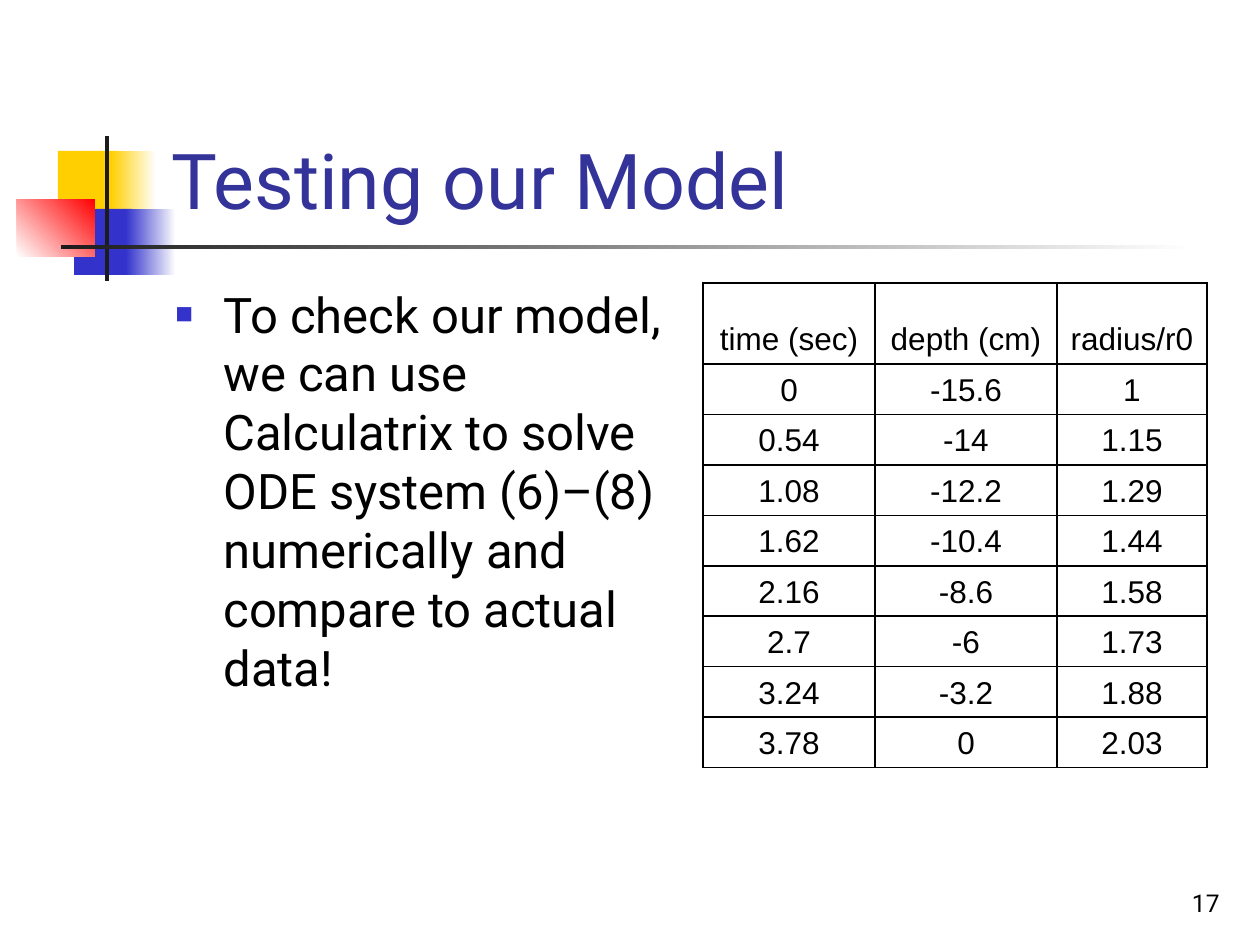
from dataclasses import dataclass
from typing import Optional

import pptx
import pptx.dml.color
import pptx.enum.shapes
import pptx.enum.text
import pptx.oxml
import pptx.oxml.ns
import pptx.util
from lxml import etree

PX = 914400 / 126
ALIGN = pptx.enum.text.PP_ALIGN
ANCHOR = pptx.enum.text.MSO_ANCHOR

BLACK, WHITE, DARK = "000000", "FFFFFF", "1C1C1C"
YELLOW, BLUE, RED, NAVY = "FFCF01", "3333CC", "FF0000", "333399"


@dataclass
class Block:
    """A decorative rectangle; with an end colour it becomes a gradient."""
    x: int
    y: int
    w: int
    h: int
    color: str
    end: Optional[str] = None
    angle: int = 0


BLOCKS = [
    Block(58, 151, 60, 66, YELLOW),
    Block(111, 151, 45, 66, YELLOW, WHITE),
    Block(74, 209, 58, 66, BLUE),
    Block(126, 209, 50, 66, BLUE, WHITE),
    Block(17, 199, 78, 58, WHITE, RED, 45),
    Block(105, 136, 4, 145, DARK),
    Block(61, 245, 1134, 4, DARK, WHITE),
]

COLUMN_WIDTHS = [172, 182, 150]
TABLE_HEIGHT, HEADER_HEIGHT = 484, 81
ROWS = [
    ("time (sec)", "depth (cm)", "radius/r0"),
    ("0", "-15.6", "1"),
    ("0.54", "-14", "1.15"),
    ("1.08", "-12.2", "1.29"),
    ("1.62", "-10.4", "1.44"),
    ("2.16", "-8.6", "1.58"),
    ("2.7", "-6", "1.73"),
    ("3.24", "-3.2", "1.88"),
    ("3.78", "0", "2.03"),
]


def emu(px: float) -> int:
    return round(px * PX)


def rgb(color: str) -> pptx.dml.color.RGBColor:
    return pptx.dml.color.RGBColor.from_string(color)


def add_block(s, b: Block) -> None:
    sp = s.shapes.add_shape(pptx.enum.shapes.MSO_SHAPE.RECTANGLE,
                            emu(b.x), emu(b.y), emu(b.w), emu(b.h))
    sp.shadow.inherit = False
    sp.line.fill.background()
    if b.end is None:
        sp.fill.solid()
        sp.fill.fore_color.rgb = rgb(b.color)
        return
    sp.fill.gradient()
    sp.fill.gradient_angle = b.angle
    for stop, color, position in zip(sp.fill.gradient_stops, (b.color, b.end), (0, 1)):
        stop.color.rgb = rgb(color)
        stop.position = position


def write(tf, text: str, *, size: int, font: str = "Roboto", color: str = BLACK,
          align=ALIGN.LEFT):
    p = tf.paragraphs[0]
    p.alignment = align
    r = p.add_run()
    r.text = text
    r.font.size = pptx.util.Pt(size)
    r.font.name = font
    r.font.color.rgb = rgb(color)
    return p


def add_text(s, x: int, y: int, w: int, h: int, text: str, *, anchor=ANCHOR.TOP,
             **fmt):
    tf = s.shapes.add_textbox(emu(x), emu(y), emu(w), emu(h)).text_frame
    tf.word_wrap = True
    tf.vertical_anchor = anchor
    return write(tf, text, **fmt)


def add_bullet(p, char: str, color: str, percent: int, indent: int) -> None:
    pPr = p._p.get_or_add_pPr()
    pPr.set("marL", str(emu(indent)))
    pPr.set("indent", str(-emu(indent)))
    qn = pptx.oxml.ns.qn
    buClr = etree.SubElement(pPr, qn("a:buClr"))
    etree.SubElement(buClr, qn("a:srgbClr"), val=color)
    etree.SubElement(pPr, qn("a:buSzPct"), val=str(percent * 1000))
    etree.SubElement(pPr, qn("a:buFont"), typeface="Arial")
    etree.SubElement(pPr, qn("a:buChar"), char=char)


def set_borders(cell, color: str, width: int) -> None:
    tcPr = cell._tc.get_or_add_tcPr()
    ns = pptx.oxml.ns.nsdecls("a")
    for i, side in enumerate(("lnL", "lnR", "lnT", "lnB")):
        tcPr.insert(i, pptx.oxml.parse_xml(
            f'<a:{side} {ns} w="{pptx.util.Pt(width)}"><a:solidFill>'
            f'<a:srgbClr val="{color}"/></a:solidFill></a:{side}>'))


def add_data_table(s, x: int, y: int) -> None:
    table = s.shapes.add_table(len(ROWS), len(COLUMN_WIDTHS), emu(x), emu(y),
                               emu(sum(COLUMN_WIDTHS)), emu(TABLE_HEIGHT)).table
    table.first_row = table.horz_banding = False
    for column, width in zip(table.columns, COLUMN_WIDTHS):
        column.width = emu(width)
    row_height = (TABLE_HEIGHT - HEADER_HEIGHT) / (len(ROWS) - 1)
    for i, values in enumerate(ROWS):
        table.rows[i].height = emu(row_height if i else HEADER_HEIGHT)
        for j, value in enumerate(values):
            cell = table.cell(i, j)
            cell.fill.background()
            cell.vertical_anchor = ANCHOR.BOTTOM
            set_borders(cell, BLACK, 1)
            write(cell.text_frame, value, size=18, font="Arial", align=ALIGN.CENTER)


def main() -> None:
    prs = pptx.Presentation()
    prs.slide_width, prs.slide_height = emu(1260), emu(945)
    s = prs.slides.add_slide(prs.slide_layouts[6])
    for block in BLOCKS:
        add_block(s, block)
    add_text(s, 970, 861, 262, 63, "17", size=14, align=ALIGN.RIGHT,
             anchor=ANCHOR.BOTTOM)
    add_text(s, 159, 29, 1073, 202, "Testing our Model", size=44, color=NAVY,
             anchor=ANCHOR.BOTTOM)
    p = add_text(s, 163, 278, 525, 567,
                 "To check our model, we can use Calculatrix to solve ODE system "
                 "(6)–(8) numerically and compare to actual data!", size=28)
    p.space_before = pptx.util.Pt(5.6)
    add_bullet(p, "■", BLUE, 60, 48)
    add_data_table(s, 703, 283)
    prs.save("out.pptx")


if __name__ == "__main__":
    main()
